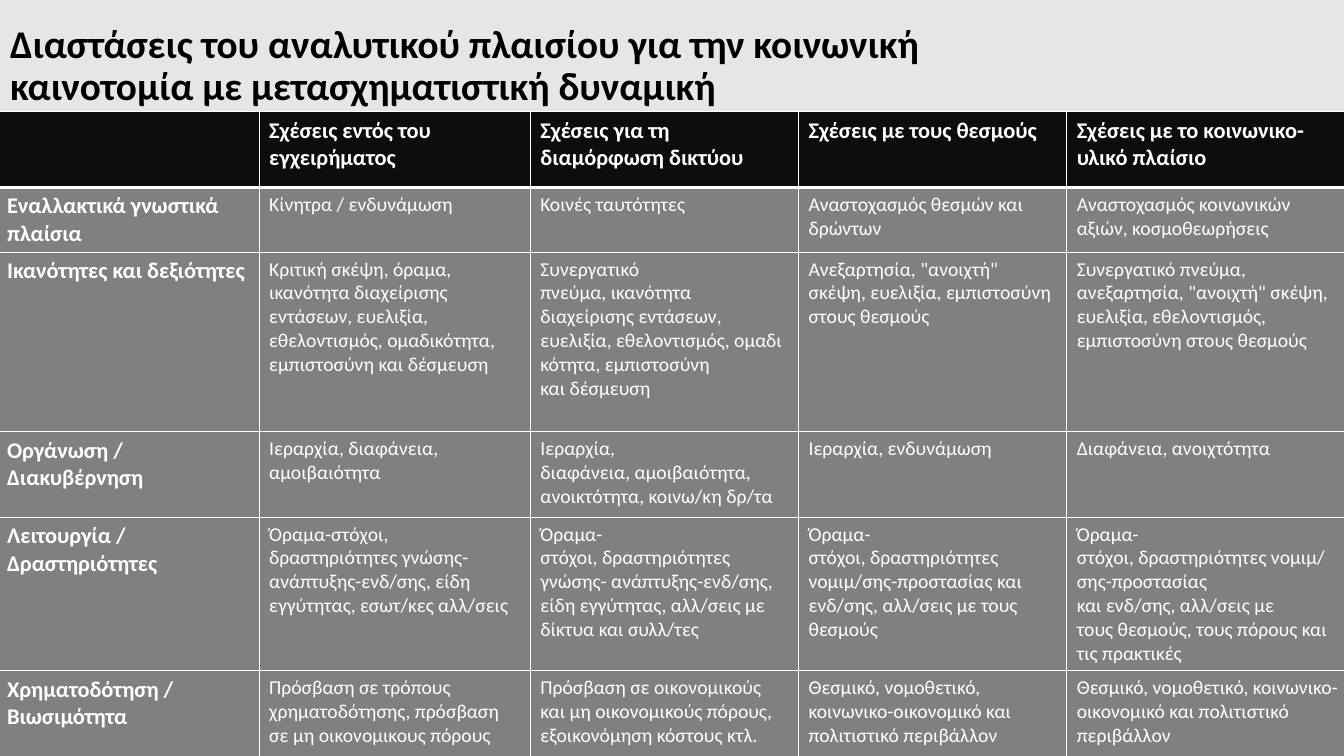
from dataclasses import dataclass

import lxml.etree
import pptx
import pptx.dml.color
import pptx.enum.text
import pptx.oxml.ns
import pptx.util

Inches = pptx.util.Inches
Pt = pptx.util.Pt

COLORS = {
    "background": "E7E6E6",
    "title": "000000",
    "header": "0D0D0D",
    "body": "808080",
    "line": "FFFFFF",
    "text": "FFFFFF",
}
FONT = "Calibri"
TIE = "~"  # stands for a no-break space in the wording below
NO_BREAK_SPACE = chr(160)
TITLE = "Διαστάσεις του αναλυτικού πλαισίου για την κοινωνική καινοτομία~με~μετασχηματιστική δυναμική"
COLUMN_WIDTHS = (2.6, 2.69, 2.66, 2.66, 2.83)


@dataclass(frozen=True)
class Row:
    height: float
    label: str
    entries: tuple[str, ...]


ROWS = (
    Row(0.75, "", (
        "Σχέσεις εντός του εγχειρήματος",
        "Σχέσεις για τη διαμόρφωση δικτύου",
        "Σχέσεις με τους θεσμούς",
        "Σχέσεις με το κοινωνικο-υλικό πλαίσιο",
    )),
    Row(0.64, "Εναλλακτικά γνωστικά πλαίσια", (
        "Κίνητρα / ενδυνάμωση",
        "Κοινές ταυτότητες",
        "Αναστοχασμός θεσμών και δρώντων",
        "Αναστοχασμός κοινωνικών αξιών, κοσμοθεωρήσεις",
    )),
    Row(1.78, "Ικανότητες και δεξιότητες", (
        "Κριτική σκέψη, όραμα, ικανότητα διαχείρισης εντάσεων, ευελιξία, "
        "εθελοντισμός, ομαδικότητα, εμπιστοσύνη και δέσμευση",
        "Συνεργατικό πνεύμα,~ικανότητα διαχείρισης~εντάσεων, ευελιξία,~"
        "εθελοντισμός,~ομαδικότητα,~εμπιστοσύνη και~δέσμευση",
        'Ανεξαρτησία, "ανοιχτή" σκέψη, ευελιξία, εμπιστοσύνη στους θεσμούς',
        'Συνεργατικό πνεύμα, ανεξαρτησία, "ανοιχτή"~σκέψη, ευελιξία, '
        "εθελοντισμός, εμπιστοσύνη στους~θεσμούς",
    )),
    Row(0.85, "Οργάνωση / Διακυβέρνηση", (
        "Ιεραρχία, διαφάνεια, αμοιβαιότητα",
        "Ιεραρχία, διαφάνεια,~αμοιβαιότητα, ανοικτότητα, κοινω/κη δρ/τα",
        "Ιεραρχία, ενδυνάμωση",
        "Διαφάνεια, ανοιχτότητα",
    )),
    Row(1.3, "Λειτουργία / Δραστηριότητες", (
        "Όραμα-στόχοι, δραστηριότητες γνώσης- ανάπτυξης-ενδ/σης, "
        "είδη εγγύτητας, εσωτ/κες αλλ/σεις",
        "Όραμα-στόχοι,~δραστηριότητες γνώσης-~ανάπτυξης-ενδ/σης, "
        "είδη~εγγύτητας, αλλ/σεις με δίκτυα και συλλ/τες",
        "Όραμα-στόχοι,~δραστηριότητες νομιμ/σης-προστασίας και "
        "ενδ/σης,~αλλ/σεις με τους θεσμούς",
        "Όραμα-στόχοι,~δραστηριότητες~νομιμ/σης-προστασίας και~ενδ/σης,~"
        "αλλ/σεις με τους~θεσμούς, τους πόρους και τις πρακτικές",
    )),
    Row(1.03, "Χρηματοδότηση / Βιωσιμότητα", (
        "Πρόσβαση σε τρόπους χρηματοδότησης, πρόσβαση σε μη οικονομικους πόρους",
        "Πρόσβαση σε οικονομικούς και μη οικονομικούς πόρους, εξοικονόμηση κόστους κτλ.",
        "Θεσμικό, νομοθετικό, κοινωνικο-οικονομικό και πολιτιστικό περιβάλλον",
        "Θεσμικό, νομοθετικό,~κοινωνικο-οικονομικό και~πολιτιστικό περιβάλλον",
    )),
)


def rgb(name: str) -> pptx.dml.color.RGBColor:
    return pptx.dml.color.RGBColor.from_string(COLORS[name])


def set_text(tf, text: str, size: int, bold: bool, color: str) -> None:
    tf.text = text.replace(TIE, NO_BREAK_SPACE)
    for p in tf.paragraphs:
        for r in p.runs:
            r.font.name = FONT
            r.font.size = Pt(size)
            r.font.bold = bold
            r.font.color.rgb = rgb(color)


def set_borders(cell, widths: dict[str, int]) -> None:
    """Draw the cell's edges; widths maps L, R, T and B to points."""
    qn = pptx.oxml.ns.qn
    tc_pr = cell._tc.get_or_add_tcPr()
    for side, width in widths.items():
        ln = lxml.etree.SubElement(tc_pr, qn(f"a:ln{side}"), w=str(Pt(width)))
        fill = lxml.etree.SubElement(ln, qn("a:solidFill"))
        lxml.etree.SubElement(fill, qn("a:srgbClr"), val=COLORS["line"])


def add_title(s) -> None:
    sp = s.shapes.title
    sp.left, sp.top = Inches(0), Inches(0.04)
    sp.width, sp.height = Inches(13.33), Inches(1.24)
    tf = sp.text_frame
    set_text(tf, TITLE, 28, True, "title")
    tf.word_wrap = True
    tf.auto_size = pptx.enum.text.MSO_AUTO_SIZE.NONE
    tf.vertical_anchor = pptx.enum.text.MSO_ANCHOR.MIDDLE
    p = tf.paragraphs[0]
    p.alignment = pptx.enum.text.PP_ALIGN.LEFT
    p.line_spacing = 0.9


def add_dimensions_table(s) -> None:
    table = s.shapes.add_table(
        len(ROWS), len(COLUMN_WIDTHS),
        Inches(-0.03), Inches(1.11), Inches(13.44), Inches(6.35),
    ).table
    table.horz_banding = False
    for column, width in zip(table.columns, COLUMN_WIDTHS):
        column.width = Inches(width)
    for i, row in enumerate(ROWS):
        table.rows[i].height = Inches(row.height)
        is_header = i == 0
        widths = {"L": 1, "R": 1, "T": 3 if i == 1 else 1, "B": 3 if is_header else 1}
        for j, text in enumerate((row.label, *row.entries)):
            cell = table.cell(i, j)
            set_borders(cell, widths)
            cell.fill.solid()
            cell.fill.fore_color.rgb = rgb("header" if is_header else "body")
            is_heading = is_header or j == 0
            set_text(cell.text_frame, text, 16 if is_heading else 14, is_heading, "text")


def main() -> None:
    prs = pptx.Presentation()
    prs.slide_width, prs.slide_height = Inches(13.33), Inches(7.5)
    s = prs.slides.add_slide(prs.slide_layouts.get_by_name("Title Only"))
    s.background.fill.solid()
    s.background.fill.fore_color.rgb = rgb("background")
    add_title(s)
    add_dimensions_table(s)
    prs.save("out.pptx")


if __name__ == "__main__":
    main()
